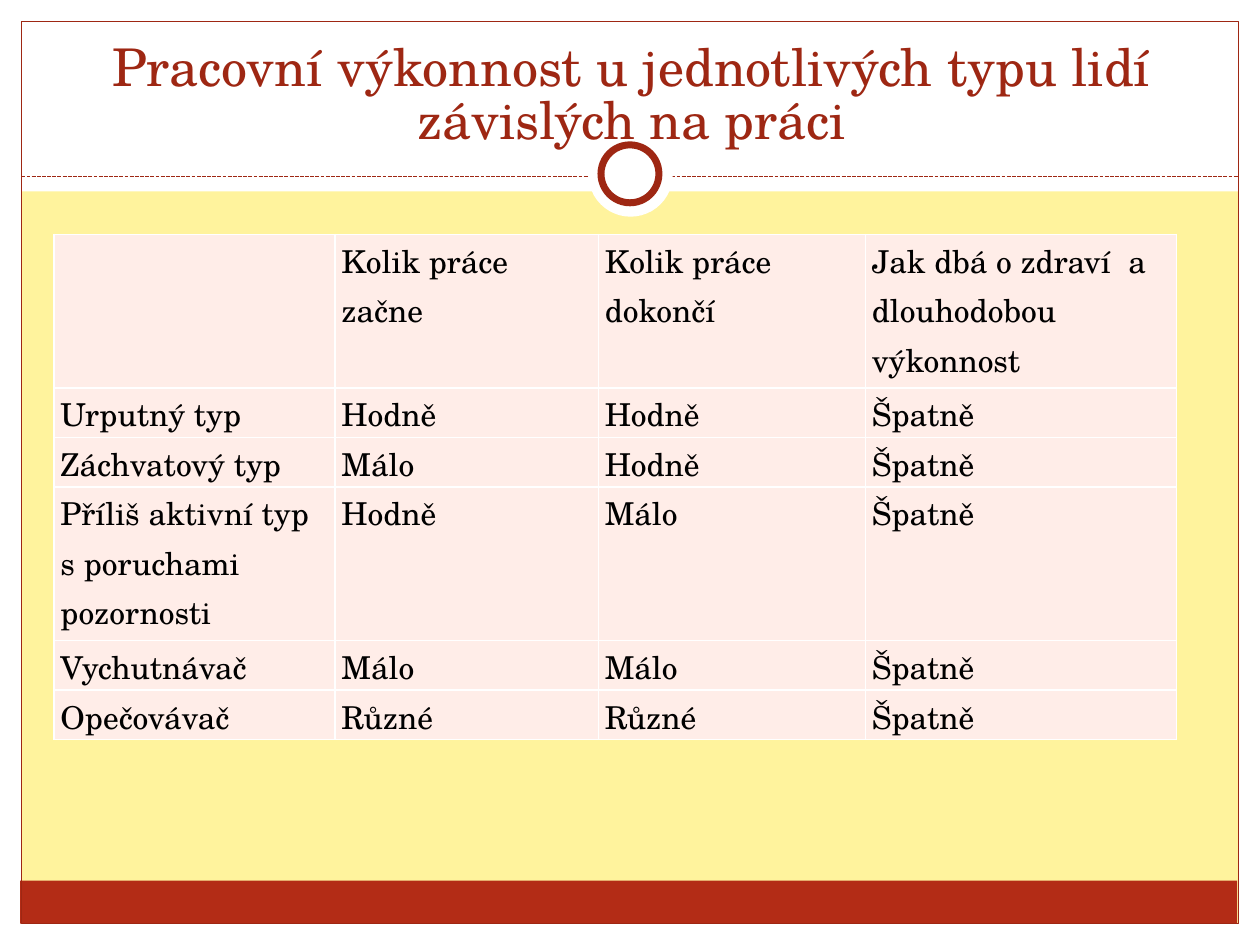
"""Build the slide on work performance by type of work-dependent people."""
from pptx import Presentation
from pptx.dml.color import RGBColor
from pptx.enum.dml import MSO_LINE
from pptx.enum.shapes import MSO_CONNECTOR, MSO_SHAPE as SHAPE
from pptx.enum.text import MSO_ANCHOR, MSO_AUTO_SIZE, PP_ALIGN
from pptx.oxml.ns import qn
from pptx.util import Inches, Pt
from lxml.etree import SubElement

WHITE = RGBColor(0xFF, 0xFF, 0xFF)
BLACK = RGBColor(0, 0, 0)
YELLOW = RGBColor(0xFF, 0xF3, 0x9D)
RED = RGBColor(0xB3, 0x2C, 0x16)
DARK_RED = RGBColor(0x9E, 0x27, 0x13)
PINK = RGBColor(0xFF, 0xED, 0xE8)
FONT = "TeX Gyre Schola"


def add_run(p, text, size, color):
    r = p.add_run()
    r.text = text
    r.font.name = FONT
    r.font.size = Pt(size)
    r.font.color.rgb = color


def add_border(cell):
    tcPr = cell._tc.get_or_add_tcPr()
    for i, side in enumerate(("lnL", "lnR", "lnT", "lnB")):
        ln = tcPr.makeelement(qn("a:" + side), {"w": str(Pt(1))})
        fill = SubElement(ln, qn("a:solidFill"))
        SubElement(fill, qn("a:srgbClr"), val=str(WHITE))
        tcPr.insert(i, ln)


prs = Presentation()
prs.slide_width, prs.slide_height = Inches(10), Inches(7.5)
s = prs.slides.add_slide(prs.slide_layouts[5])
s.background.fill.solid()
s.background.fill.fore_color.rgb = YELLOW

backdrop = [
    (SHAPE.RECTANGLE, 0, 7.33, 10, 0.17, WHITE, None),
    (SHAPE.RECTANGLE, 0, 0, 10, 1.52, WHITE, None),
    (SHAPE.RECTANGLE, 0, 0, 0.17, 7.5, WHITE, None),
    (SHAPE.RECTANGLE, 9.83, 0, 0.17, 7.5, WHITE, None),
    (SHAPE.RECTANGLE, 0.16, 6.99, 9.66, 0.34, RED, None),
    (SHAPE.RECTANGLE, 0.17, 0.17, 9.66, 7.16, None, 0.75),
    (SHAPE.OVAL, 4.67, 1.05, 0.67, 0.67, WHITE, None),
    (SHAPE.OVAL, 4.77, 1.15, 0.46, 0.46, WHITE, 4),
]
for kind, x, y, w, h, fill, line in backdrop:
    if kind == SHAPE.OVAL and line is None:
        rule = s.shapes.add_connector(
            MSO_CONNECTOR.STRAIGHT, Inches(0.17), Inches(1.4), Inches(9.83), Inches(1.4))
        rule.line.color.rgb = DARK_RED
        rule.line.width = Pt(0.75)
        rule.line.dash_style = MSO_LINE.SQUARE_DOT
        SubElement(rule._element.spPr, qn("a:effectLst"))
    sp = s.shapes.add_shape(kind, Inches(x), Inches(y), Inches(w), Inches(h))
    sp.shadow.inherit = False
    if fill is None:
        sp.fill.background()
    else:
        sp.fill.solid()
        sp.fill.fore_color.rgb = fill
    if line is None:
        sp.line.fill.background()
    else:
        sp.line.color.rgb = DARK_RED
        sp.line.width = Pt(line)

title = s.shapes.title
s.shapes._spTree.append(title._element)
title.left, title.top = Inches(0.35), Inches(0.36)
title.width, title.height = Inches(9.33), Inches(0.83)
tf = title.text_frame
tf.word_wrap = True
tf.auto_size = MSO_AUTO_SIZE.NONE
tf.vertical_anchor = MSO_ANCHOR.BOTTOM
tf.margin_top = tf.margin_bottom = 0
p = tf.paragraphs[0]
p.alignment = PP_ALIGN.CENTER
p.line_spacing = 0.84
add_run(p, "Pracovní výkonnost u jednotlivých typu lidí závislých na práci", 29.7, DARK_RED)

rows = [
    ("", "Kolik práce začne", "Kolik práce dokončí",
     "Jak dbá o zdraví  a dlouhodobou výkonnost"),
    ("Urputný typ", "Hodně", "Hodně", "Špatně"),
    ("Záchvatový typ", "Málo", "Hodně", "Špatně"),
    ("Příliš aktivní typ s poruchami pozornosti", "Hodně", "Málo", "Špatně"),
    ("Vychutnávač", "Málo", "Málo", "Špatně"),
    ("Opečovávač", "Různé", "Různé", "Špatně"),
]
col_widths = [2.23, 2.09, 2.12, 2.47]
row_heights = [1.22, 0.39, 0.39, 1.22, 0.39, 0.39]
table = s.shapes.add_table(len(rows), len(col_widths), Inches(0.43), Inches(1.86),
                           Inches(8.92), Inches(3.98)).table
table.first_row = table.horz_banding = False
for col, width in zip(table.columns, col_widths):
    col.width = Inches(width)
for row, height, texts in zip(table.rows, row_heights, rows):
    row.height = Inches(height)
    for cell, text in zip(row.cells, texts):
        cell.fill.solid()
        cell.fill.fore_color.rgb = PINK
        cell.margin_left = cell.margin_right = Inches(0.05)
        cell.margin_top = cell.margin_bottom = 0
        add_border(cell)
        if text:
            p = cell.text_frame.paragraphs[0]
            p.line_spacing = 1.07
            add_run(p, text, 18, BLACK)

prs.save("out.pptx")
